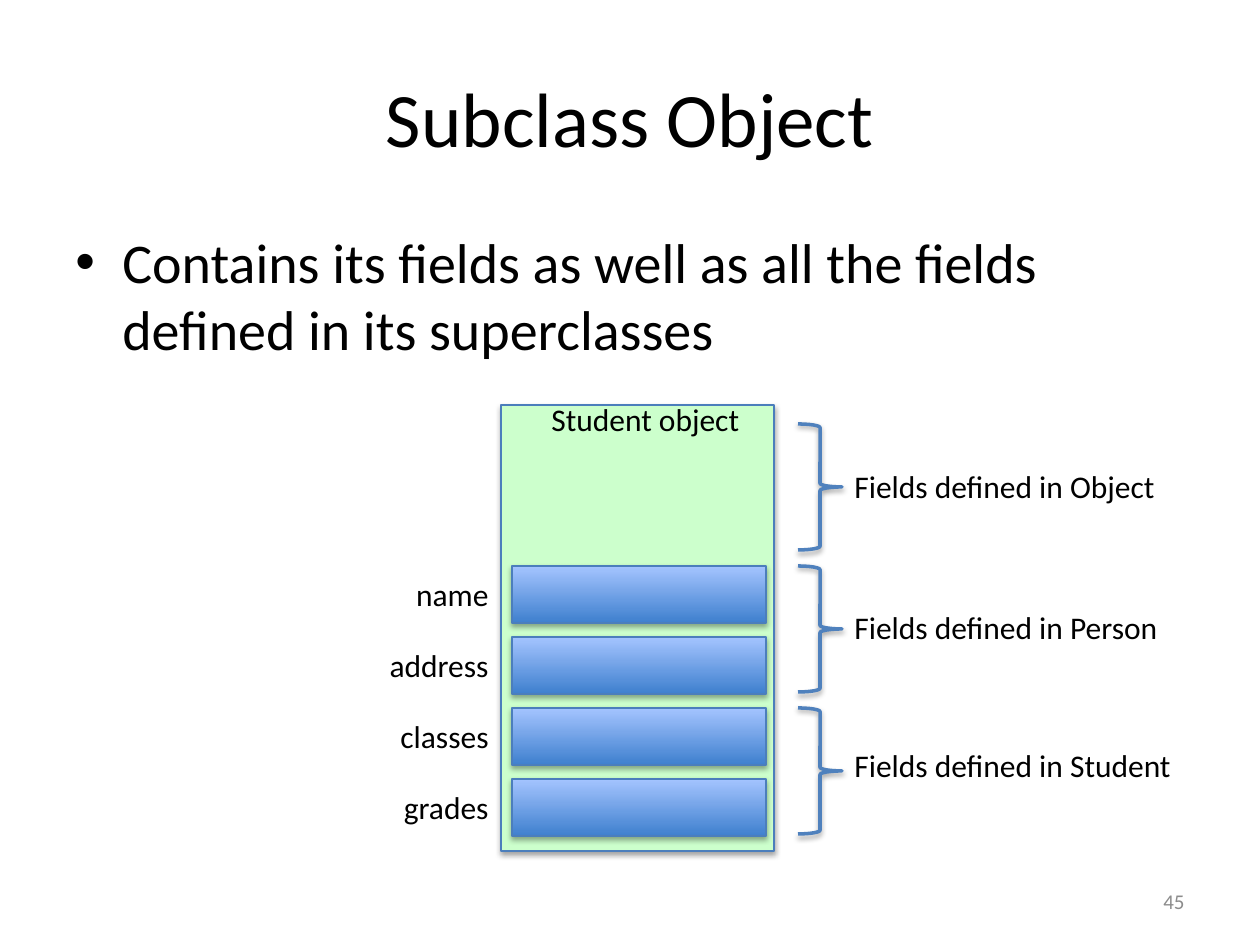
"""Build the "Subclass Object" slide: a Student object and where its fields are defined."""
from lxml.etree import SubElement
from pptx import Presentation
from pptx.dml.color import RGBColor
from pptx.enum.shapes import MSO_SHAPE as SHAPE
from pptx.enum.text import MSO_ANCHOR as ANCHOR, MSO_AUTO_SIZE as AUTO, PP_ALIGN as ALIGN
from pptx.oxml.ns import qn
from pptx.util import Emu, Pt

PX = 914400 / 126


def rgb(value):
    return RGBColor.from_string(value)


def add(box, kind=None, text="", size=18, color="000000", align=ALIGN.LEFT,
        anchor=ANCHOR.TOP, wrap=True, grow=False, fill=None, line="4B7EBC", width=0.75):
    at = [Emu(round(v * PX)) for v in box]
    if kind is None:
        sp = s.shapes.add_textbox(*at)
        tf = sp.text_frame
        tf.word_wrap = wrap
        tf.auto_size = AUTO.SHAPE_TO_FIT_TEXT if grow else AUTO.NONE
        tf.vertical_anchor = anchor
        p = tf.paragraphs[0]
        p.text = text
        p.alignment = align
        r = p.runs[0]
        r.font.name, r.font.size = "Calibri", Pt(size)
        r.font.color.rgb = rgb(color)
        return sp
    sp = s.shapes.add_shape(kind, *at)
    if fill is None:
        sp.fill.background()
    elif len(fill) == 1:
        sp.fill.solid()
        sp.fill.fore_color.rgb = rgb(fill[0])
    else:
        sp.fill.gradient()
        sp.fill.gradient_angle = 90
        for stop, value in zip(sp.fill.gradient_stops, fill):
            stop.color.rgb = rgb(value)
    sp.line.color.rgb = rgb(line)
    sp.line.width = Pt(width)
    sp.shadow.inherit = False
    effects = sp._element.spPr.find(qn("a:effectLst"))
    shadow = SubElement(effects, qn("a:outerShdw"), blurRad="40000", dist="23000",
                        dir="5400000", rotWithShape="0")
    black = SubElement(shadow, qn("a:srgbClr"), val="000000")
    SubElement(black, qn("a:alpha"), val="35000")
    return sp


prs = Presentation()
prs.slide_width, prs.slide_height = Emu(round(1260 * PX)), Emu(round(945 * PX))
s = prs.slides.add_slide(prs.slide_layouts[6])

add((501, 405, 273, 446), SHAPE.RECTANGLE, fill=["CCFFCC"])
add((63, 38, 1134, 157), text="Subclass Object", size=44, align=ALIGN.CENTER, anchor=ANCHOR.MIDDLE)

body = add((63, 221, 1134, 624), size=32,
           text="Contains its fields as well as all the fields defined in its superclasses")
pPr = body.text_frame.paragraphs[0]._p.get_or_add_pPr()
indent = round(47 * PX)
pPr.set("marL", str(indent))
pPr.set("indent", str(-indent))
SubElement(pPr, qn("a:buFont"), typeface="Arial")
SubElement(pPr, qn("a:buChar"), char="•")

add((903, 876, 294, 50), text="45", size=12, color="8C8C8C", align=ALIGN.RIGHT, anchor=ANCHOR.MIDDLE)

for i, field in enumerate(["name", "address", "classes", "grades"]):
    y = 566 + 71 * i
    add((512, y, 254, 57), SHAPE.RECTANGLE, fill=["3F80CE", "A4C4FF"])
    add((339, y + 3, 162, 50), text=field, align=ALIGN.RIGHT, grow=True)

add((539, 394, 217, 50), text="Student object", wrap=False, grow=True)

for i, (owner, y, w) in enumerate([("Object", 461, 329), ("Person", 602, 333), ("Student", 740, 345)]):
    add((798, 424 + 142 * i, 44, 126), SHAPE.RIGHT_BRACE, line="4F81BD", width=2)
    add((842, y, w, 50), text=f"Fields defined in {owner}", wrap=False, grow=True)

prs.save("out.pptx")
